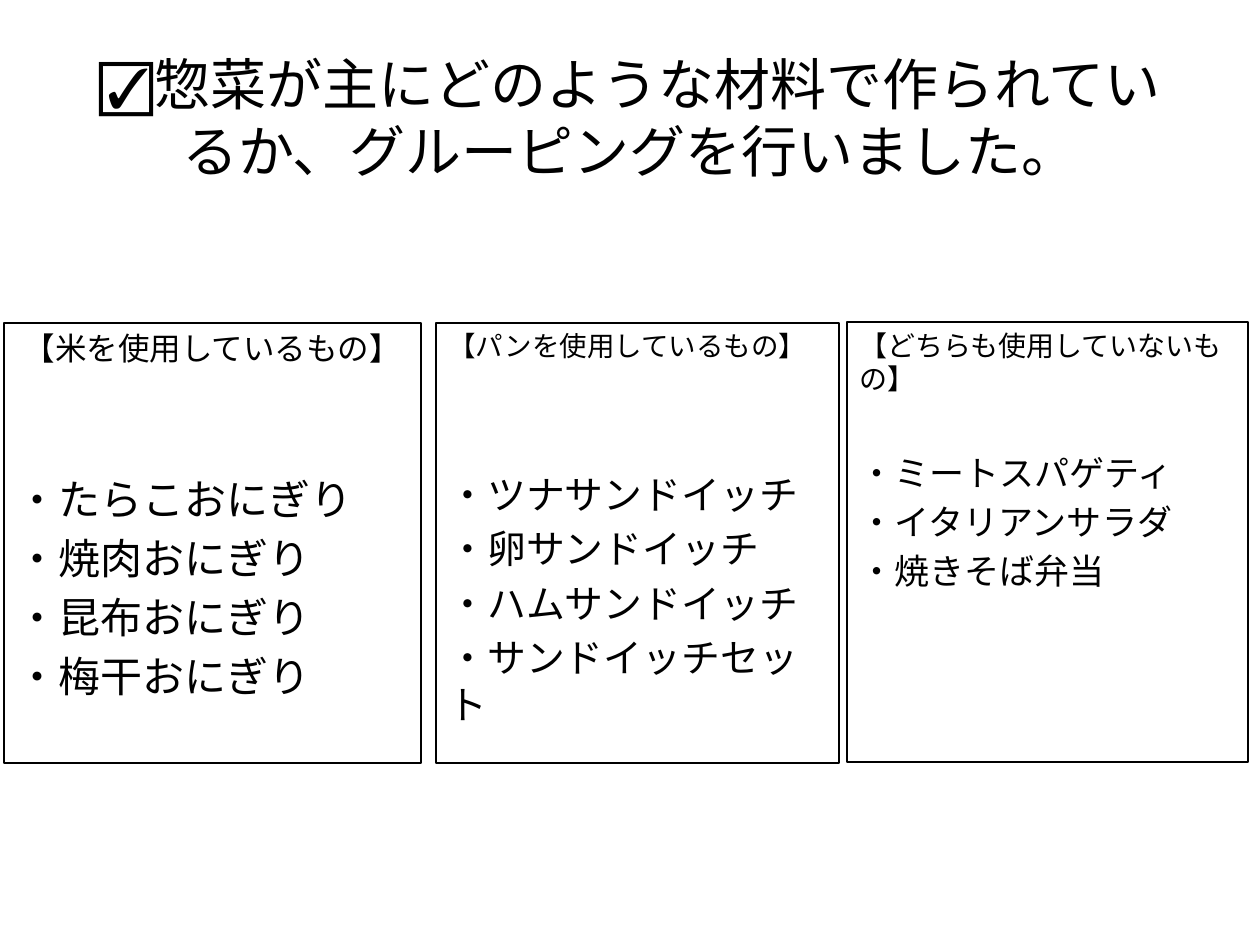
import pptx
import pptx.util
import pptx.dml.color
import pptx.enum.shapes
import pptx.enum.text
import pptx.oxml
import pptx.oxml.ns

PX = 914400 // 126
FONT = "Noto Sans CJK JP"
COLORS = {"ink": "000000", "paper": "FFFFFF"}
LEFT = pptx.enum.text.PP_ALIGN.LEFT
CENTER = pptx.enum.text.PP_ALIGN.CENTER


def write(paragraph, text, size, align=LEFT, before=0):
    paragraph.alignment = align
    paragraph.space_before = pptx.util.Pt(before)
    run = paragraph.add_run()
    run.text = text
    run.font.size = pptx.util.Pt(size)
    run.font.name = FONT
    run.font.color.rgb = pptx.dml.color.RGBColor.from_string(COLORS["ink"])
    # Japanese text takes its font from the East Asian slot
    east_asian = pptx.oxml.parse_xml(
        f'<a:ea {pptx.oxml.ns.nsdecls("a")} typeface="{FONT}"/>')
    run.font._element.append(east_asian)


presentation = pptx.Presentation()
presentation.slide_width = 1260 * PX
presentation.slide_height = 945 * PX
slide = presentation.slides.add_slide(presentation.slide_layouts[5])
slide.background.fill.solid()
slide.background.fill.fore_color.rgb = pptx.dml.color.RGBColor.from_string(COLORS["paper"])

# Title
title = slide.shapes.title
title.left, title.top, title.width, title.height = [n * PX for n in (63, 38, 1134, 157)]
title.text_frame.vertical_anchor = pptx.enum.text.MSO_ANCHOR.MIDDLE
write(title.text_frame.paragraphs[0],
      "☑惣菜が主にどのような材料で作られているか、グルーピングを行いました。",
      size=32, align=CENTER)

# Groups: left, top, width, heading, heading size, alignment, gap in points, item size, items
groups = [
    (4, 323, 417, "【米を使用しているもの】", 18, CENTER, 61, 24,
     ["たらこおにぎり", "焼肉おにぎり", "昆布おにぎり", "梅干おにぎり"]),
    (436, 323, 403, "【パンを使用しているもの】", 15.7, LEFT, 62, 22.2,
     ["ツナサンドイッチ", "卵サンドイッチ", "ハムサンドイッチ", "サンドイッチセット"]),
    (847, 322, 401, "【どちらも使用していないもの】", 16, LEFT, 32, 20,
     ["ミートスパゲティ", "イタリアンサラダ", "焼きそば弁当"]),
]
for left, top, width, heading, heading_size, align, gap, item_size, items in groups:
    # Outlined box
    box = slide.shapes.add_shape(pptx.enum.shapes.MSO_SHAPE.RECTANGLE,
                                 left * PX, top * PX, width * PX, 440 * PX)
    box.shadow.inherit = False
    box.fill.background()
    box.line.color.rgb = pptx.dml.color.RGBColor.from_string(COLORS["ink"])
    box.line.width = pptx.util.Pt(0.75)

    # Heading, then the list of dishes below a wide gap
    frame = box.text_frame
    frame.word_wrap = True
    frame.vertical_anchor = pptx.enum.text.MSO_ANCHOR.TOP
    write(frame.paragraphs[0], heading, size=heading_size, align=align)
    for index, item in enumerate(items):
        write(frame.add_paragraph(), "・" + item, size=item_size,
              before=item_size * 0.2 if index else gap)

presentation.save("out.pptx")
